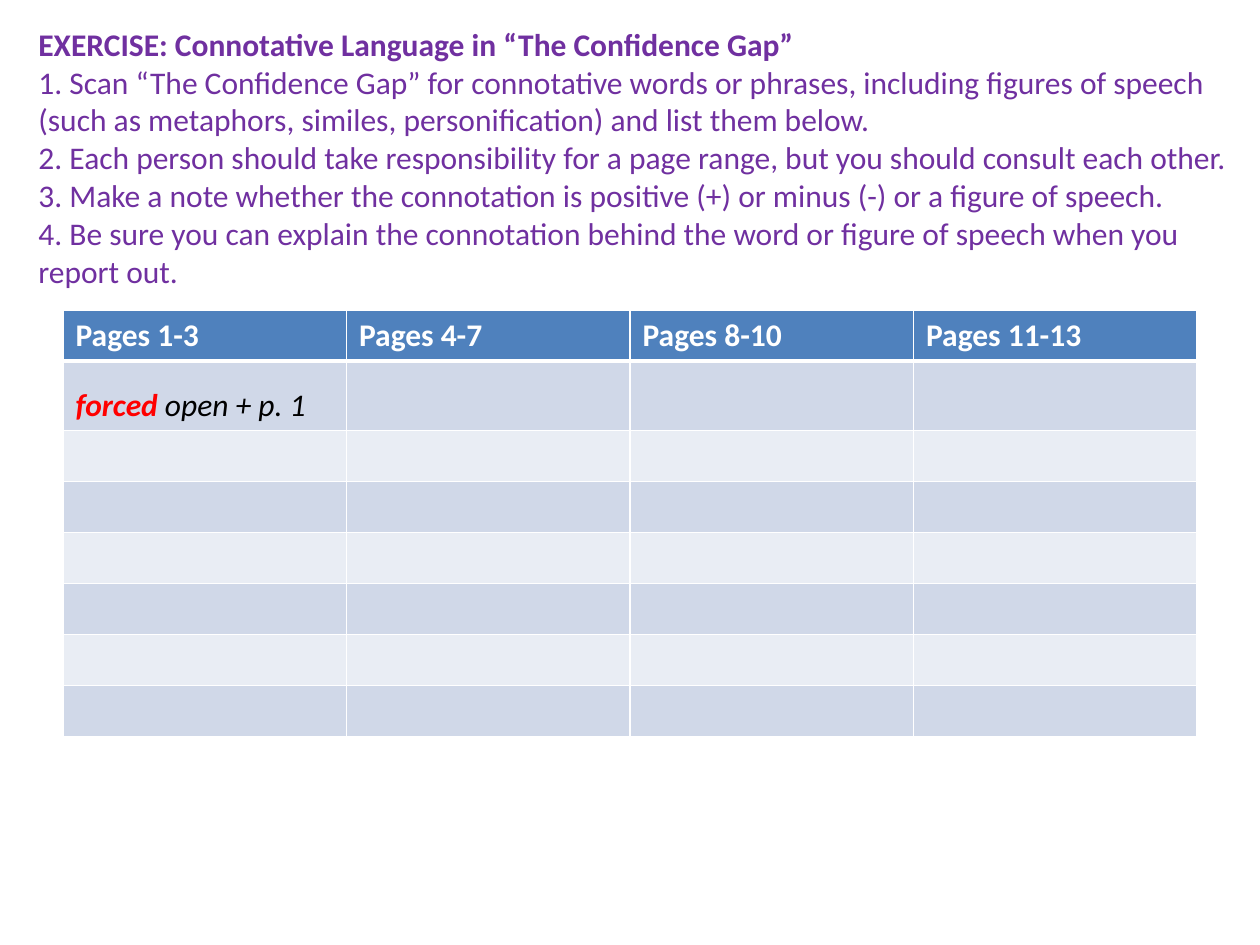
"""Build the connotative language exercise slide."""
from typing import NamedTuple

from lxml.etree import SubElement
from pptx import Presentation
from pptx.dml.color import RGBColor as RGB
from pptx.enum.text import MSO_ANCHOR as Anchor
from pptx.oxml.ns import qn
from pptx.util import Emu, Pt

FONT, SIZE = "Calibri", 18
PURPLE, WHITE, BLACK, RED = "7030A0", "FFFFFF", "000000", "FF0000"
HEADER_FILL, BANDS = "4F81BD", ("D0D8E8", "E9EDF4")
BODY_ROWS, ROW_HEIGHT = 7, 51


class Box(NamedTuple):
    left: int
    top: int
    width: int
    height: int


class Span(NamedTuple):
    text: str
    color: str
    bold: bool = False
    italic: bool = False


INSTRUCTIONS = [
    Span("EXERCISE: Connotative Language in “The Confidence Gap”", PURPLE, bold=True),
    *(Span(text, PURPLE) for text in (
        "1. Scan “The Confidence Gap” for connotative words or phrases, including figures of "
        "speech (such as metaphors, similes, personification) and list them below.",
        "2. Each person should take responsibility for a page range, but you should consult each other.",
        "3. Make a note whether the connotation is positive (+) or minus (-) or a figure of speech.",
        "4. Be sure you can explain the connotation behind the word or figure of speech when you report out.",
    )),
]
PAGE_RANGES = ["Pages 1-3", "Pages 4-7", "Pages 8-10", "Pages 11-13"]
EXAMPLE = [Span("forced", RED, bold=True, italic=True), Span(" open + p. 1", BLACK, italic=True)]


def px(n: int) -> Emu:
    return Emu(round(n * 914400 / 126))


def rgb(color: str) -> RGB:
    return RGB.from_string(color)


def style(font, span: Span) -> None:
    font.name, font.size = FONT, Pt(SIZE)
    font.bold, font.italic = span.bold, span.italic
    font.color.rgb = rgb(span.color)


def write(p, spans: list[Span]) -> None:
    for span in spans:
        r = p.add_run()
        r.text = span.text
        style(r.font if len(spans) > 1 else p.font, span)


def add_instructions(s, box: Box, lines: list[Span]) -> None:
    tf = s.shapes.add_textbox(*map(px, box)).text_frame
    tf.word_wrap = True
    tf.vertical_anchor = Anchor.MIDDLE
    for i, line in enumerate(lines):
        write(tf.add_paragraph() if i else tf.paragraphs[0], [line])


def set_cell(cell, fill: str, bottom: int) -> None:
    tc_pr = cell._tc.get_or_add_tcPr()
    for side, width in (("L", 1), ("R", 1), ("T", 1), ("B", bottom)):
        ln = SubElement(tc_pr, qn(f"a:ln{side}"), w=str(Pt(width)))
        SubElement(SubElement(ln, qn("a:solidFill")), qn("a:srgbClr"), val=WHITE)
    cell.fill.solid()
    cell.fill.fore_color.rgb = rgb(fill)


def add_word_table(s, box: Box) -> None:
    table = s.shapes.add_table(BODY_ROWS + 1, len(PAGE_RANGES), *map(px, box)).table
    for i, row in enumerate(table.rows):
        row.height = px(ROW_HEIGHT)
        for cell in row.cells:
            set_cell(cell, BANDS[(i - 1) % 2] if i else HEADER_FILL, 1 if i else 3)
    for j, pages in enumerate(PAGE_RANGES):
        write(table.cell(0, j).text_frame.paragraphs[0], [Span(pages, WHITE, bold=True)])
    p = table.cell(1, 0).text_frame.paragraphs[0]
    p.line_spacing = 1.5
    write(p, EXAMPLE)


def main() -> None:
    prs = Presentation()
    prs.slide_width, prs.slide_height = px(1260), px(945)
    s = prs.slides.add_slide(prs.slide_layouts[6])
    add_instructions(s, Box(26, 14, 1214, 286), INSTRUCTIONS)
    add_word_table(s, Box(63, 310, 1134, ROW_HEIGHT * (BODY_ROWS + 1)))
    prs.save("out.pptx")


if __name__ == "__main__":
    main()
